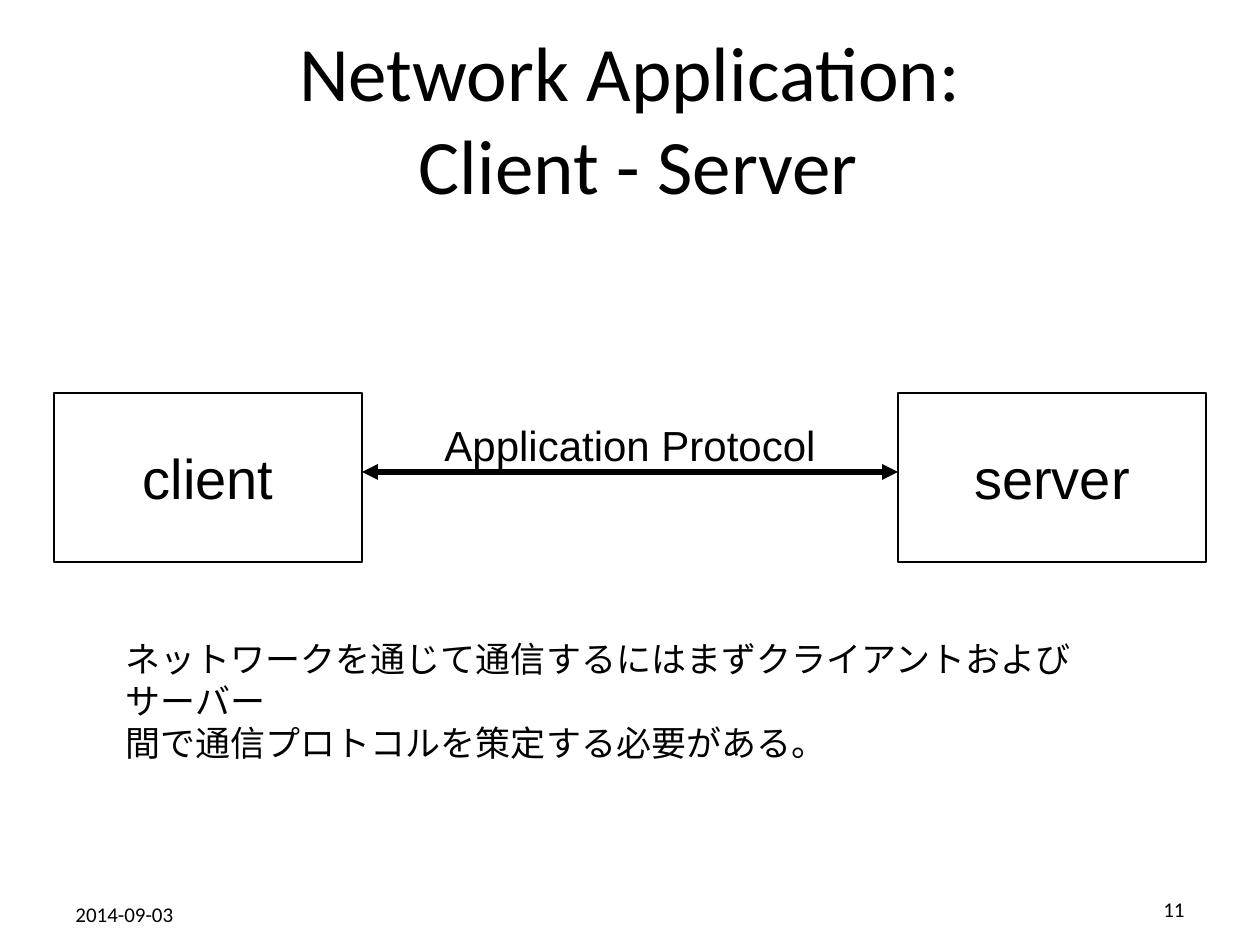
"""Build the client and server network application slide."""
import pptx
import pptx.dml.color
import pptx.enum.shapes
import pptx.enum.text
import pptx.oxml.ns
import pptx.util
from lxml import etree

EMU_PER_PX = 914400 / 126
COLORS = {"ink": "000000", "paper": "FFFFFF"}
ALIGN = pptx.enum.text.PP_ALIGN
ANCHOR = pptx.enum.text.MSO_ANCHOR


def px(length):
    """Turn pixels into EMU."""
    return pptx.util.Emu(round(length * EMU_PER_PX))


def color(name):
    """Look up a named colour."""
    return pptx.dml.color.RGBColor.from_string(COLORS[name])


def write_text(shape, text, font, size, align=ALIGN.LEFT, anchor=ANCHOR.TOP, wrap=True):
    """Put formatted text into a shape."""
    frame = shape.text_frame
    frame.text = text
    frame.word_wrap = wrap
    frame.vertical_anchor = anchor
    for paragraph in frame.paragraphs:
        paragraph.alignment = align
        for run in paragraph.runs:
            run.font.name = font
            run.font.size = pptx.util.Pt(size)
            run.font.color.rgb = color("ink")


def add_text(slide, box, text, font, size, **layout):
    """Add a text box."""
    shape = slide.shapes.add_textbox(*map(px, box))
    write_text(shape, text, font, size, **layout)


def add_node(slide, box, text):
    """Add an outlined box for one network participant."""
    shape = slide.shapes.add_shape(pptx.enum.shapes.MSO_SHAPE.RECTANGLE, *map(px, box))
    shape.shadow.inherit = False
    shape.fill.background()
    shape.line.color.rgb = color("ink")
    shape.line.width = pptx.util.Pt(0.75)
    write_text(shape, text, "Arial", 32, align=ALIGN.CENTER, anchor=ANCHOR.MIDDLE, wrap=False)


def add_double_arrow(slide, left, right, y):
    """Add a horizontal line with an arrowhead at each end."""
    connector = slide.shapes.add_connector(
        pptx.enum.shapes.MSO_CONNECTOR.STRAIGHT, px(left), px(y), px(right), px(y))
    connector.line.color.rgb = color("ink")
    connector.line.width = pptx.util.Pt(3)
    line = connector.line._get_or_add_ln()
    for end in ("a:headEnd", "a:tailEnd"):
        etree.SubElement(line, pptx.oxml.ns.qn(end), type="triangle")
    etree.SubElement(connector._element.spPr, pptx.oxml.ns.qn("a:effectLst"))


def main():
    """Build and save the slide."""
    presentation = pptx.Presentation()
    presentation.slide_width, presentation.slide_height = px(1260), px(945)
    slide = presentation.slides.add_slide(presentation.slide_layouts[6])
    slide.background.fill.solid()
    slide.background.fill.fore_color.rgb = color("paper")

    add_text(slide, (904, 890, 293, 39), "11", "Calibri", 12, align=ALIGN.RIGHT)
    add_text(slide, (63, 38, 1134, 158), "Network Application:\v Client - Server",
             "Calibri", 44, align=ALIGN.CENTER, anchor=ANCHOR.MIDDLE)

    node_width, client_left, server_left = 308, 54, 898
    for left, name in ((client_left, "client"), (server_left, "server")):
        add_node(slide, (left, 393, node_width, 169), name)
    add_double_arrow(slide, client_left + node_width, server_left, 472)

    add_text(slide, (432, 413, 397, 63), "Application Protocol", "Arial", 24, wrap=False)
    add_text(slide, (113, 631, 997, 97),
             "ネットワークを通じて通信するにはまずクライアントおよびサーバー\n"
             "間で通信プロトコルを策定する必要がある。", "Arial", 20)
    add_text(slide, (63, 895, 293, 39), "2014-09-03", "Calibri", 12)
    presentation.save("out.pptx")


if __name__ == "__main__":
    main()
